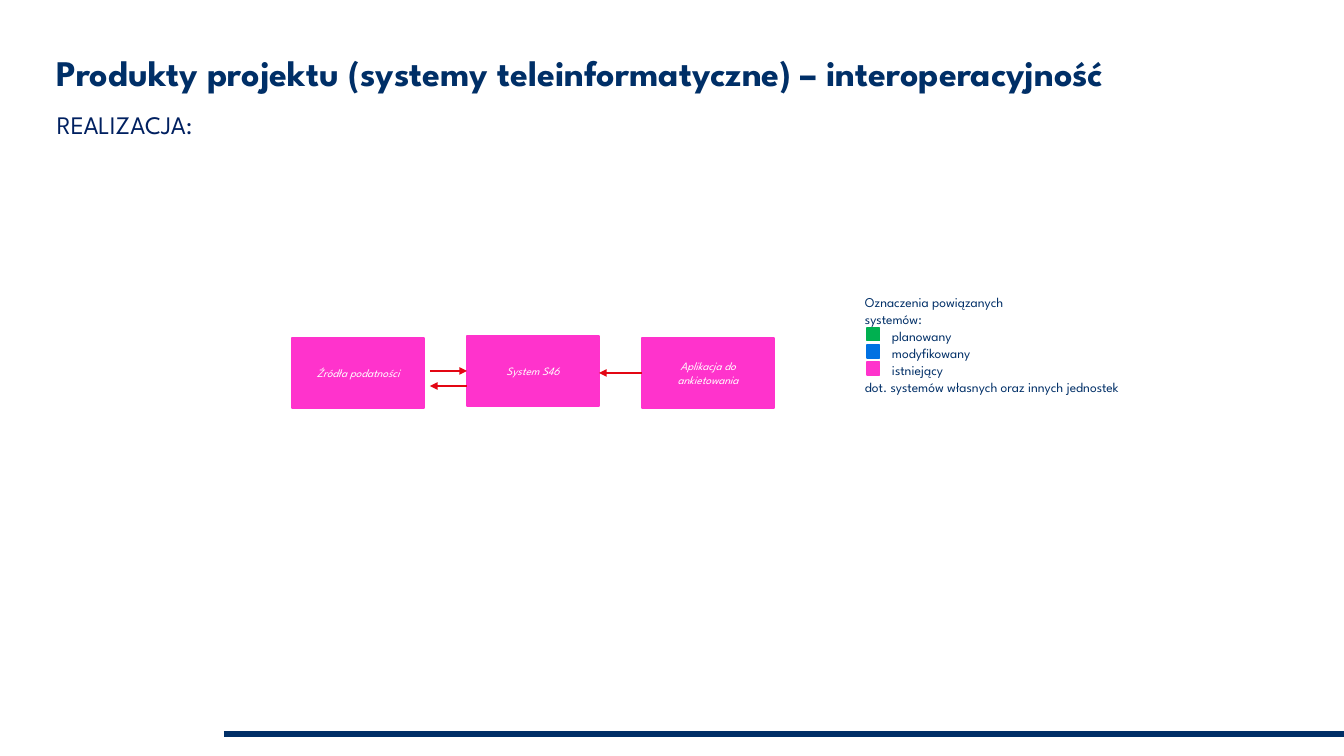
from lxml import etree
from pptx import Presentation
from pptx.dml.color import RGBColor
from pptx.enum.shapes import MSO_CONNECTOR, MSO_SHAPE
from pptx.enum.text import MSO_ANCHOR, PP_ALIGN
from pptx.oxml.ns import qn
from pptx.util import Emu, Pt

RECTANGLE = MSO_SHAPE.RECTANGLE
STRAIGHT = MSO_CONNECTOR.STRAIGHT
TOP, MIDDLE, BOTTOM = MSO_ANCHOR.TOP, MSO_ANCHOR.MIDDLE, MSO_ANCHOR.BOTTOM
CENTER = PP_ALIGN.CENTER
LEFT_SIDE = 1

FONT = "League Spartan"
NAVY = RGBColor(0x00, 0x2F, 0x67)
DARK_BLUE = RGBColor(0x00, 0x20, 0x60)
PINK = RGBColor(0xFF, 0x33, 0xCC)
GREEN = RGBColor(0x00, 0xB0, 0x50)
BLUE = RGBColor(0x00, 0x71, 0xE2)
RED = RGBColor(0xE3, 0x06, 0x13)
WHITE = RGBColor(0xFF, 0xFF, 0xFF)

PX_PER_INCH = 81
PAGE_WIDTH, PAGE_HEIGHT = 1344, 756
SYSTEM_WIDTH, SYSTEM_HEIGHT = 132, 70
LEGEND_INDENT = 27
SWATCH_SIZE = 13
SWATCH_STEP = 17


def px(length):
    return Emu(round(length * 914400 / PX_PER_INCH))


def add_span(para, text, size, color, bold=False, italic=False):
    span = para.add_run()
    span.text = text
    font = span.font
    font.name, font.size = FONT, Pt(size)
    font.bold, font.italic = bold, italic
    font.color.rgb = color


def add_text_box(page, left, top, width, height, inset=(0, 0), anchor=TOP):
    """Add an empty wrapping box and return its text frame."""
    box = page.shapes.add_textbox(px(left), px(top), px(width), px(height))
    frame = box.text_frame
    frame.word_wrap = True
    frame.vertical_anchor = anchor
    frame.margin_left = frame.margin_right = px(inset[0])
    frame.margin_top = frame.margin_bottom = px(inset[1])
    return frame


def add_block(page, left, top, width, height, color):
    block = page.shapes.add_shape(RECTANGLE, px(left), px(top), px(width), px(height))
    block.shadow.inherit = False
    block.fill.solid()
    block.fill.fore_color.rgb = color
    block.line.color.rgb = color
    block.line.width = Pt(1)
    return block


def add_system(page, left, top, name):
    system = add_block(page, left, top, SYSTEM_WIDTH, SYSTEM_HEIGHT, PINK)
    frame = system.text_frame
    frame.word_wrap = True
    frame.vertical_anchor = MIDDLE
    para = frame.paragraphs[0]
    para.alignment = CENTER
    add_span(para, name, 10, WHITE, italic=True)
    return system


def add_line(page, start, end, color, width):
    line = page.shapes.add_connector(STRAIGHT, *map(px, start + end))
    line.line.color.rgb = color
    line.line.width = Pt(width)
    etree.SubElement(line._element.spPr, qn("a:effectLst"))
    return line


def add_arrow(page, start, end):
    arrow = add_line(page, start, end, RED, 2.25)
    etree.SubElement(arrow.line._get_or_add_ln(), qn("a:tailEnd"), type="triangle")
    return arrow


def add_headings(page):
    title = add_text_box(page, 57, 0, 1224, 94, anchor=BOTTOM).paragraphs[0]
    title.line_spacing = 0.9
    add_span(title, "Produkty projektu (systemy teleinformatyczne) – interoperacyjność",
             32, NAVY, bold=True)
    subtitle = add_text_box(page, 57, 109, 1168, 36).paragraphs[0]
    add_span(subtitle, "REALIZACJA:", 22.4, DARK_BLUE)


def add_diagram(page):
    survey = add_system(page, 642, 338, "Aplikacja do ankietowania")
    central = add_system(page, 467, 336, "System S46")
    add_system(page, 292, 338, "Źródła podatności")

    from_survey = add_arrow(page, (642, 373), (599, 373))
    from_survey.begin_connect(survey, LEFT_SIDE)
    to_central = add_arrow(page, (430, 371), (467, 371))
    to_central.end_connect(central, LEFT_SIDE)
    add_arrow(page, (467, 386), (430, 386))


def add_legend(page):
    entries = [("planowany", GREEN), ("modyfikowany", BLUE), ("istniejący", PINK)]
    lines = [("Oznaczenia powiązanych", 0), ("systemów:", 0)]
    lines += [(label, LEGEND_INDENT) for label, _ in entries]
    lines.append(("dot. systemów własnych oraz innych jednostek", 0))

    frame = add_text_box(page, 857, 289, 377, 110, inset=(8, 4))
    for index, (text, indent) in enumerate(lines):
        para = frame.add_paragraph() if index else frame.paragraphs[0]
        para.line_spacing = 1.05
        if indent:
            para._p.get_or_add_pPr().set("marL", str(px(indent)))
        add_span(para, text, 12, NAVY)

    for row, (_, color) in enumerate(entries):
        add_block(page, 867, 328 + row * SWATCH_STEP, SWATCH_SIZE, SWATCH_SIZE, color)


def main():
    deck = Presentation()
    deck.slide_width, deck.slide_height = px(PAGE_WIDTH), px(PAGE_HEIGHT)
    page = deck.slides.add_slide(deck.slide_layouts[6])
    add_line(page, (224, 734), (PAGE_WIDTH, 734), NAVY, 5.25)
    add_headings(page)
    add_diagram(page)
    add_legend(page)
    deck.save("out.pptx")


if __name__ == "__main__":
    main()
